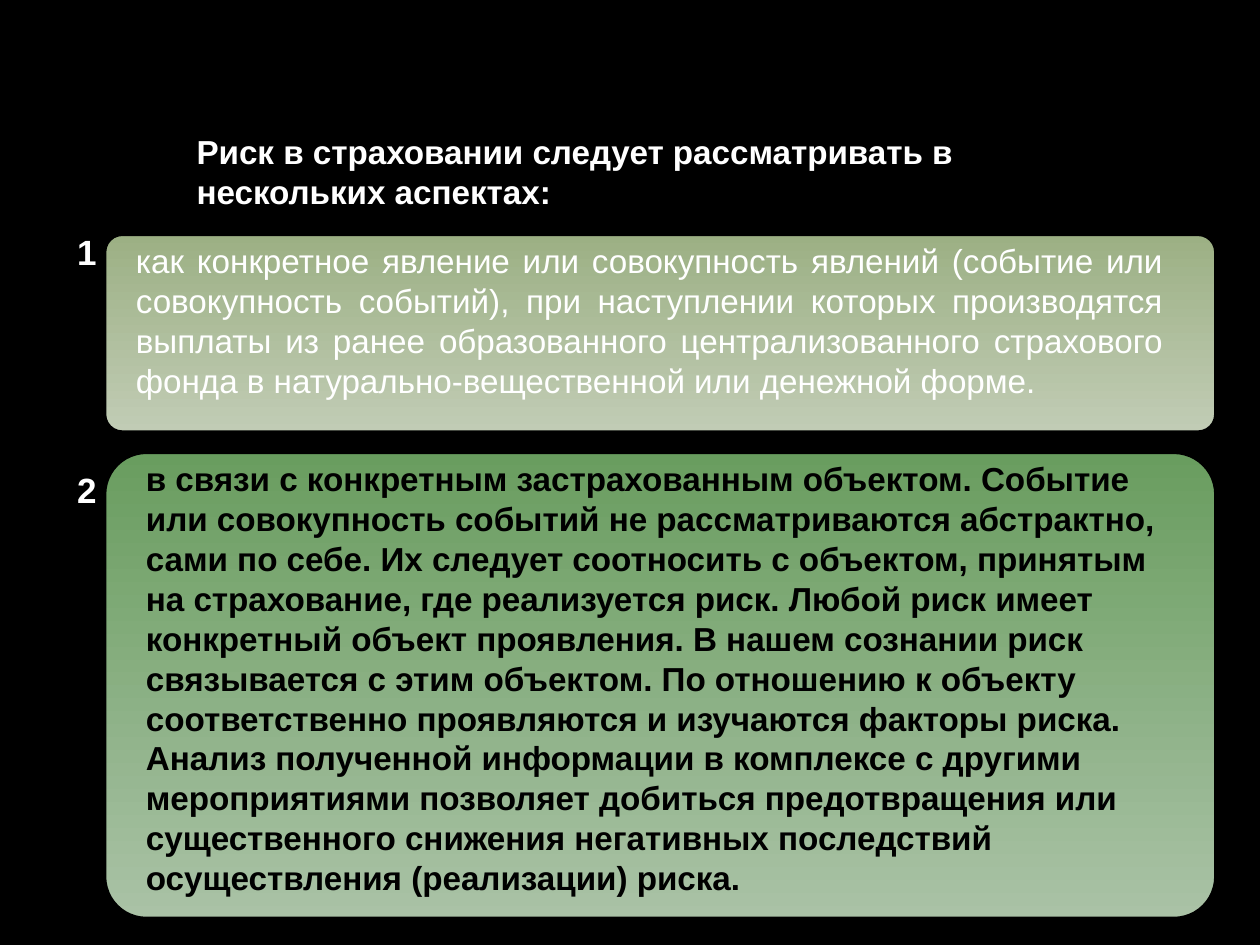
from pptx import Presentation
from pptx.dml.color import RGBColor
from pptx.enum.shapes import MSO_SHAPE
from pptx.enum.text import MSO_ANCHOR, PP_ALIGN
from pptx.util import Inches, Pt

WHITE, BLACK = "FFFFFF", "000000"
HEADING = "Риск в страховании следует рассматривать в нескольких аспектах:"
EVENT = (
    "как конкретное явление или совокупность явлений (событие или совокупность "
    "событий), при наступлении которых производятся выплаты из ранее образованного "
    "централизованного страхового фонда в натурально-вещественной или денежной форме."
)
INSURED_OBJECT = (
    "в связи с конкретным застрахованным объектом. Событие или совокупность событий "
    "не рассматриваются абстрактно, сами по себе. Их следует соотносить с объектом, "
    "принятым на страхование, где реализуется риск. Любой риск имеет конкретный объект "
    "проявления. В нашем сознании риск связывается с этим объектом. По отношению к "
    "объекту соответственно проявляются и изучаются факторы риска. Анализ полученной "
    "информации в комплексе с другими мероприятиями позволяет добиться предотвращения "
    "или существенного снижения негативных последствий осуществления (реализации) риска."
)


def rgb(value):
    return RGBColor.from_string(value)


def write(frame, text, color, size=19, bold=True, align=PP_ALIGN.LEFT, wrap=True):
    frame.text = text
    frame.word_wrap = wrap
    frame.vertical_anchor = MSO_ANCHOR.TOP
    paragraph = frame.paragraphs[0]
    paragraph.alignment = align
    paragraph.line_spacing = 1.0
    paragraph.space_before = Pt(0)
    font = paragraph.runs[0].font
    font.name = "Arial"
    font.size = Pt(size)
    font.bold = bold
    font.color.rgb = rgb(color)


def add_heading(slide, left, top, width, height):
    heading = slide.shapes.title
    heading.left, heading.top = Inches(left), Inches(top)
    heading.width, heading.height = Inches(width), Inches(height)
    write(heading.text_frame, HEADING, WHITE)


def add_text(slide, left, top, width, height, text, color, **style):
    area = slide.shapes.add_textbox(
        Inches(left), Inches(top), Inches(width), Inches(height)
    )
    write(area.text_frame, text, color, **style)


def add_aspect(slide, left, top, width, height, number, number_drop, gradient,
               text, color, inset, text_width, **style):
    panel = slide.shapes.add_shape(
        MSO_SHAPE.ROUNDED_RECTANGLE,
        Inches(left), Inches(top), Inches(width), Inches(height),
    )
    panel.adjustments[0] = 0.09
    panel.shadow.inherit = False
    panel.fill.gradient()
    panel.fill.gradient_angle = 270
    for stop, shade in zip(panel.fill.gradient_stops, gradient):
        stop.color.rgb = rgb(shade)
    panel.line.color.rgb = rgb(BLACK)
    panel.line.width = Pt(2)

    add_text(slide, left + inset, top, text_width, height - 0.1, text, color, **style)
    add_text(slide, left - 0.32, top + number_drop, 0.36, 0.44, number, WHITE,
             size=20, align=PP_ALIGN.CENTER, wrap=False)


def main():
    presentation = Presentation()
    presentation.slide_width, presentation.slide_height = Inches(10), Inches(7.5)
    slide = presentation.slides.add_slide(presentation.slide_layouts[5])
    slide.background.fill.solid()
    slide.background.fill.fore_color.rgb = rgb(BLACK)

    add_heading(slide, 1.46, 0.99, 7.48, 0.74)
    add_aspect(slide, 0.83, 1.86, 8.82, 1.57, "1", -0.08, ("9CB084", "C1CCB5"),
               EVENT, WHITE, 0.15, 8.35, bold=False, align=PP_ALIGN.JUSTIFY)
    add_aspect(slide, 0.83, 3.59, 8.82, 3.7, "2", 0.08, ("699D5F", "AAC2A6"),
               INSURED_OBJECT, BLACK, 0.23, 8.5)
    presentation.save("out.pptx")


if __name__ == "__main__":
    main()
